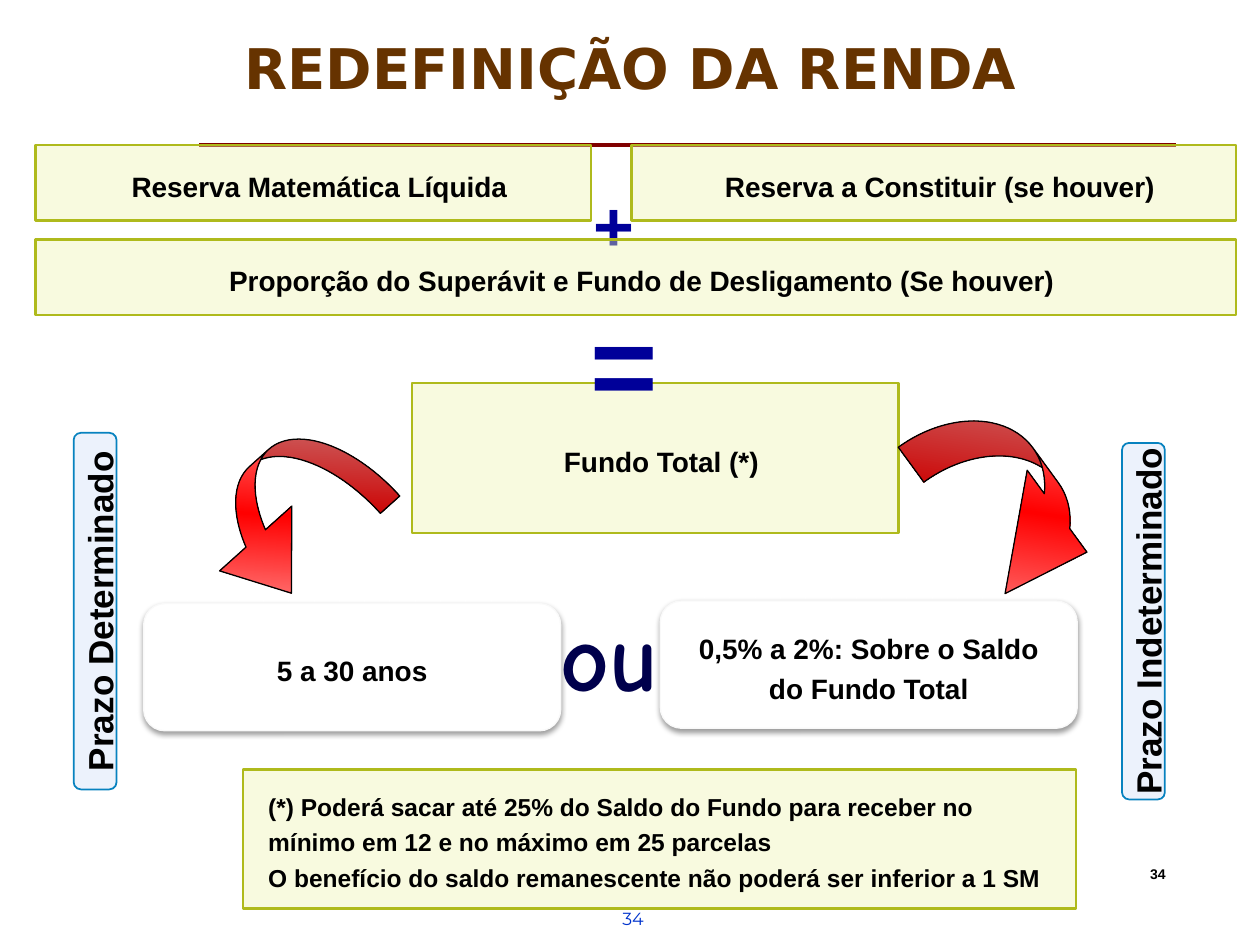
from copy import deepcopy

from lxml.etree import SubElement
from pptx import Presentation
from pptx.dml.color import RGBColor
from pptx.enum.shapes import MSO_CONNECTOR, MSO_SHAPE
from pptx.enum.text import MSO_ANCHOR, MSO_AUTO_SIZE, PP_ALIGN
from pptx.oxml.ns import qn
from pptx.util import Emu, Pt

PX = 9144  # 100 px to the inch
COLORS = {
    "title": "663300", "rule": "800000", "page": "0033CC", "text": "000000",
    "sign": "000099", "or": "00004C", "box": "EEF3AF", "box_line": "AFBA1C",
    "label": "ECF2FC", "label_line": "0782BF", "card": "FFFFFF",
    "card_line": "F9F9F9", "arrow": "FF0000", "arrow_end": "FF9999",
}


def px(*values):
    return [Emu(v * PX) for v in values]


def color(name):
    return RGBColor.from_string(COLORS[name])


def write(tf, *paragraphs, size=16, font="Arial", fill="text", bold=True,
          align=PP_ALIGN.CENTER, spacing=None, after=None, indent=0):
    for i, text in enumerate(paragraphs):
        p = tf.paragraphs[0] if i == 0 else tf.add_paragraph()
        p.alignment = align
        if spacing:
            p.line_spacing = spacing
        if after is not None:
            p.space_after = Pt(after)
        if indent:
            pPr = p._p.get_or_add_pPr()
            pPr.set("marL", str(indent * PX))
            pPr.set("indent", "0")
        r = p.add_run()
        r.text = text
        r.font.size, r.font.name, r.font.bold = Pt(size), font, bold
        r.font.color.rgb = color(fill)


def add_text(s, box, text, grow=False, **fmt):
    tf = s.shapes.add_textbox(*px(*box)).text_frame
    tf.word_wrap = True
    if grow:
        tf.auto_size = MSO_AUTO_SIZE.SHAPE_TO_FIT_TEXT
    write(tf, text, **fmt)


def add_box(s, kind, box, fill, line, width, rotation=0):
    sp = s.shapes.add_shape(kind, *px(*box))
    sp.shadow.inherit = False
    sp.fill.solid()
    sp.fill.fore_color.rgb = color(fill)
    sp.line.color.rgb = color(line)
    sp.line.width = Pt(width)
    sp.rotation = rotation
    sp.text_frame.word_wrap = True
    sp.text_frame.vertical_anchor = MSO_ANCHOR.MIDDLE
    return sp


def add_fund(s, box, *paragraphs, **fmt):
    """Translucent green rectangle."""
    sp = add_box(s, MSO_SHAPE.RECTANGLE, box, "box", "box_line", 1.5)
    rgb = sp._element.spPr.find(qn("a:solidFill"))[0]
    SubElement(rgb, qn("a:alpha"), val="40000")
    write(sp.text_frame, *paragraphs, spacing=1.2, indent=10, **fmt)


def add_label(s, box, text):
    sp = add_box(s, MSO_SHAPE.FLOWCHART_ALTERNATE_PROCESS, box,
                 "label", "label_line", 1, rotation=270)
    sp.text_frame.word_wrap = False
    write(sp.text_frame, text, size=20, spacing=1.2)


def add_card(s, box, text):
    sp = add_box(s, MSO_SHAPE.FLOWCHART_ALTERNATE_PROCESS, box,
                 "card", "card_line", 0.75)
    effects = sp._element.spPr.find(qn("a:effectLst"))
    shadow = SubElement(effects, qn("a:outerShdw"), blurRad=str(Pt(3.1)),
                        dist=str(Pt(1.6)), dir="5400000", rotWithShape="0")
    rgb = SubElement(shadow, qn("a:srgbClr"), val=COLORS["text"])
    SubElement(rgb, qn("a:alpha"), val="38000")
    write(sp.text_frame, text, spacing=1.2)


def add_arrow(s, box, rotation, adjustments, flip=False):
    sp = add_box(s, MSO_SHAPE.CURVED_RIGHT_ARROW, box, "arrow", "text", 0.75, rotation)
    for i, value in enumerate(adjustments):
        sp.adjustments[i] = value
    if flip:
        sp._element.spPr.find(qn("a:xfrm")).set("flipH", "1")
    # Light at both ends, red in the middle
    sp.fill.gradient()
    sp.fill.gradient_angle = 315
    stops = sp._element.spPr.find(qn("a:gradFill")).find(qn("a:gsLst"))
    stops.insert(1, deepcopy(stops[0]))
    names = ("arrow_end", "arrow", "arrow_end")
    for stop, position, name in zip(sp.fill.gradient_stops, (0, 0.5, 1), names):
        stop.position = position
        stop.color.rgb = color(name)


def header(s, box):
    x, y, w, h = box
    title = s.shapes.title
    title.left, title.top, title.width, title.height = px(x, y, w, h)
    tf = title.text_frame
    tf.margin_left = tf.margin_right = tf.margin_top = tf.margin_bottom = 0
    tf.vertical_anchor = MSO_ANCHOR.MIDDLE
    write(tf, "REDEFINIÇÃO DA RENDA", size=32, font="DejaVu Sans",
          fill="title", spacing=0.8)
    rule = s.shapes.add_connector(MSO_CONNECTOR.STRAIGHT,
                                  *px(x + 115, y + 94, x + 890, y + 94))
    rule.line.color.rgb = color("rule")
    rule.line.width = Pt(2)
    SubElement(rule._element.spPr, qn("a:effectLst"))


def fund_sum(s, box):
    """Two reserves plus the surplus make up the total fund."""
    x, y, w, h = box
    add_fund(s, (x, y, 441, 60), "Reserva Matemática Líquida")
    add_fund(s, (x + w - 480, y, 480, 60), "Reserva a Constituir (se houver)")
    add_text(s, (x + 433, y + 11, 41, 91), "+", grow=True, size=40,
             fill="sign", spacing=1.2)
    add_fund(s, (x, y + 75, w, 60),
             "Proporção do Superávit e Fundo de Desligamento (Se houver)")
    add_fund(s, (x + 299, y + h - 119, 386, 119), "Fundo Total (*)")
    add_text(s, (x + 261, y + 90, 412, 143), "=", grow=True, size=66,
             fill="sign", spacing=1.2)


def fixed_term(s, box):
    x, y, w, h = box
    add_arrow(s, (x + 121, y, 97, 154), 48.1, (0.213, 1.35, 0.528))
    add_label(s, (x - 124, y + 136, 283, 34), "Prazo Determinado")
    add_card(s, (x + w - 331, y + 147, 331, 101), "5 a 30 anos")


def open_term(s, box):
    x, y, w, h = box
    add_label(s, (x + w - 158, y + 164, 283, 34), "Prazo Indeterminado")
    add_card(s, (x, y + 165, 331, 101), "0,5% a 2%: Sobre o Saldo do Fundo Total")
    add_arrow(s, (x + 235, y, 86, 184), 323.9, (0.399, 0.936, 0.836), flip=True)


def footer(s, box):
    x, y, w, h = box
    add_fund(s, (x, y, 661, h),
             "(*) Poderá sacar até 25% do Saldo do Fundo para receber no "
             "mínimo em 12 e no máximo em 25 parcelas",
             "O benefício do saldo remanescente não poderá ser inferior a 1 SM",
             size=14, align=PP_ALIGN.LEFT)
    # Page numbers
    add_text(s, (x + 291, y + 105, 71, 34), "34", size=10, font="Montserrat",
             fill="page", bold=False, align=PP_ALIGN.LEFT)
    add_text(s, (x + w - 55, y + 71, 55, 30), "34", size=8, align=PP_ALIGN.LEFT)


def main():
    prs = Presentation()
    prs.slide_width, prs.slide_height = px(1000, 750)
    s = prs.slides.add_slide(prs.slide_layouts[5])
    header(s, (43, 21, 915, 75))
    fund_sum(s, (28, 115, 953, 308))
    fixed_term(s, (58, 332, 387, 294))
    open_term(s, (524, 312, 400, 323))
    add_text(s, (429, 469, 110, 101), "ou", grow=True, size=54,
             font="Comic Neue", fill="or", after=6)
    footer(s, (193, 611, 765, 110))
    prs.save("out.pptx")


if __name__ == "__main__":
    main()
